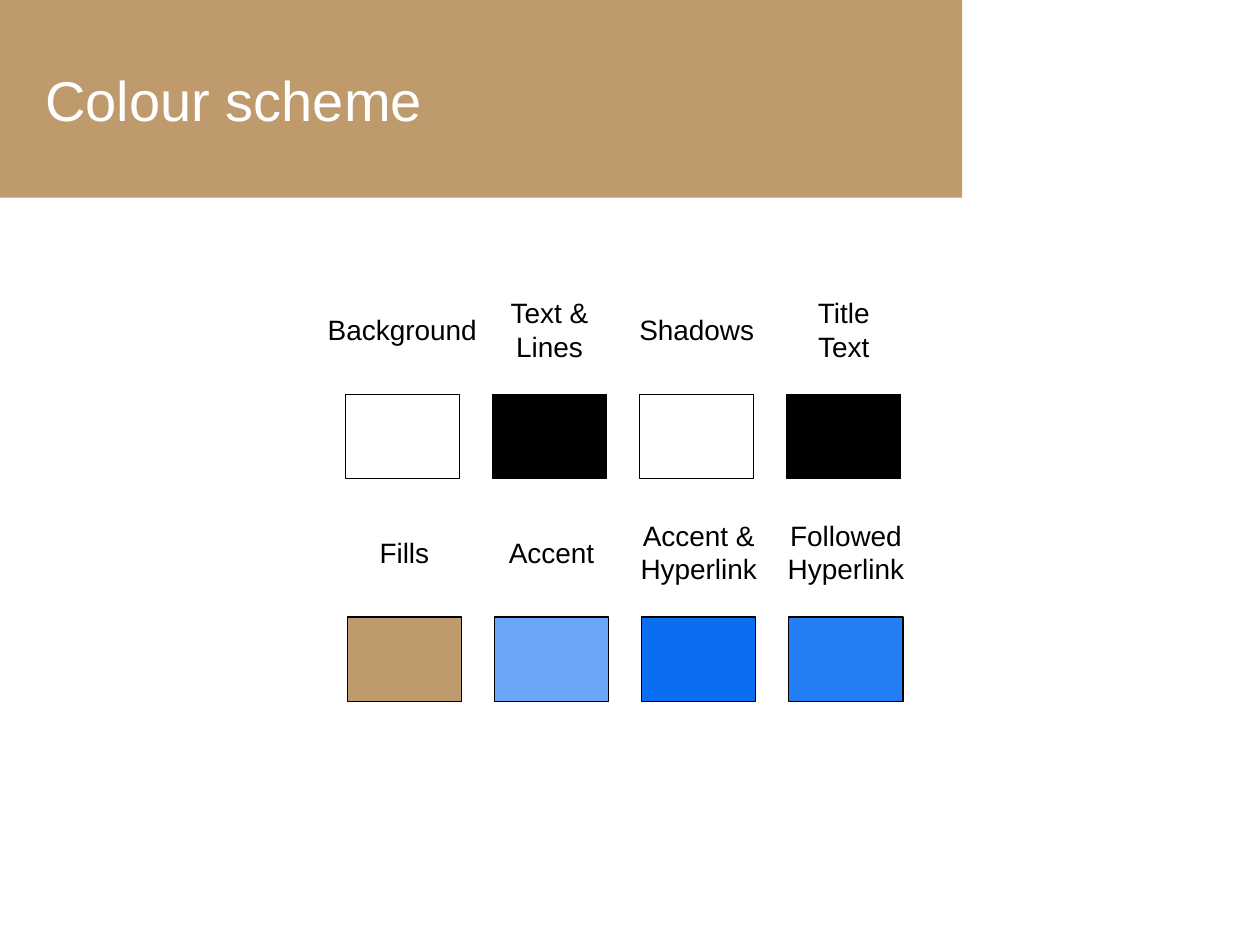
from pptx import Presentation
from pptx.dml.color import RGBColor
from pptx.enum.shapes import MSO_SHAPE as Shape
from pptx.enum.text import MSO_ANCHOR as Anchor, MSO_AUTO_SIZE as Auto, PP_ALIGN as Align
from pptx.util import Pt

WHITE = RGBColor(0xFF, 0xFF, 0xFF)
BLACK = RGBColor(0x00, 0x00, 0x00)
TAN = RGBColor(0xBF, 0x9A, 0x6D)
SKY = RGBColor(0x6B, 0xA7, 0xF8)
BLUE = RGBColor(0x0B, 0x6D, 0xEF)
AZURE = RGBColor(0x23, 0x7D, 0xF5)

deck = Presentation()
deck.slide_width, deck.slide_height = Pt(720), Pt(540)
slide = deck.slides.add_slide(deck.slide_layouts[6])


def add_rect(x, y, w, h, fill, line=None):
    rect = slide.shapes.add_shape(Shape.RECTANGLE, Pt(x), Pt(y), Pt(w), Pt(h))
    rect.shadow.inherit = False
    rect.fill.solid()
    rect.fill.fore_color.rgb = fill
    if line is None:
        rect.line.fill.background()
    else:
        rect.line.color.rgb = line
        rect.line.width = Pt(0.75)


def add_text(text, x, y, w, h, size=16, color=BLACK, align=Align.CENTER,
             anchor=Anchor.TOP, wrap=False, fit=Auto.SHAPE_TO_FIT_TEXT):
    box = slide.shapes.add_textbox(Pt(x), Pt(y), Pt(w), Pt(h))
    frame = box.text_frame
    frame.text = text
    frame.word_wrap = wrap
    frame.auto_size = fit
    frame.vertical_anchor = anchor
    for para in frame.paragraphs:
        para.alignment = align
        for run in para.runs:
            run.font.name = "Arial"
            run.font.size = Pt(size)
            run.font.color.rgb = color


# Title band
add_rect(0, 0, 549.8, 113, TAN)
add_text("Colour scheme", 18.8, 11.5, 510.5, 90, size=32, color=WHITE,
         align=Align.LEFT, anchor=Anchor.MIDDLE, wrap=True, fit=Auto.NONE)

# Swatch rows: left, top, then label, label width and colour of each swatch
SIDE, TALL, STEP = 65.2, 48.2, 84.1
rows = [
    (197.3, 225.4, [("Background", 102, WHITE), ("Text &\nLines", 62, BLACK),
                    ("Shadows", 82, WHITE), ("Title\vText", 47, BLACK)]),
    (198.5, 352.6, [("Fills", 45, TAN), ("Accent", 65, SKY),
                    ("Accent &\nHyperlink", 84, BLUE),
                    ("Followed\nHyperlink", 84, AZURE)]),
]
for left, top, items in rows:
    for col, (label, wide, color) in enumerate(items):
        x = left + col * STEP
        add_rect(x, top, SIDE, TALL, color, line=BLACK)
        # Labels are centred on a line above the swatches
        high = 26.6 if len(label.splitlines()) == 1 else 46
        add_text(label, x + (SIDE - wide) / 2, top - 36.9 - high / 2, wide, high)

deck.save("out.pptx")
